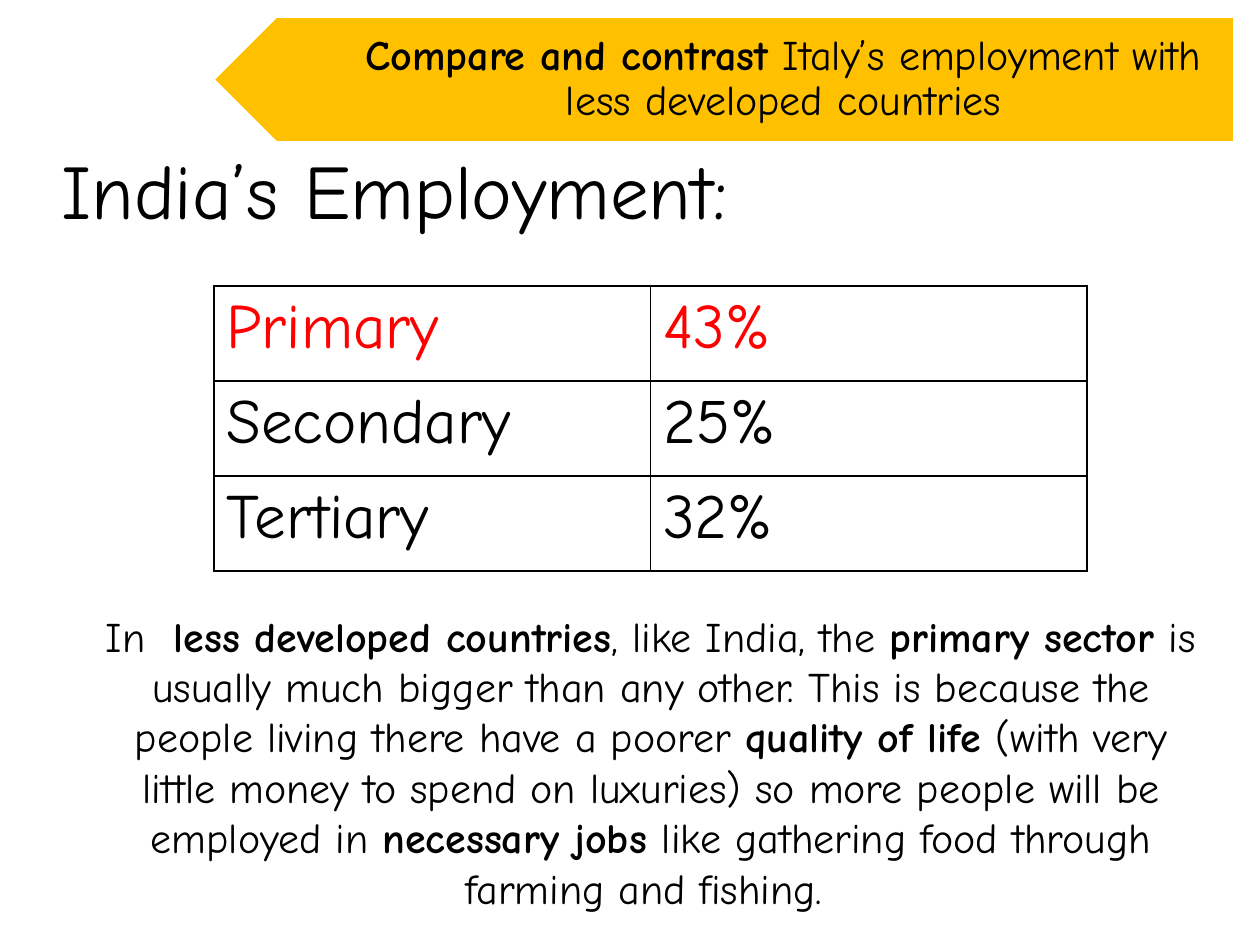
import pptx
import pptx.util
import pptx.dml.color
import pptx.enum.shapes
import pptx.enum.text
import pptx.oxml
import pptx.oxml.ns

PX = 914400 // 126  # EMU in one px
FONT = "Comic Neue"
BLACK = pptx.dml.color.RGBColor(0x00, 0x00, 0x00)
RED = pptx.dml.color.RGBColor(0xFF, 0x00, 0x00)
WHITE = pptx.dml.color.RGBColor(0xFF, 0xFF, 0xFF)
AMBER = pptx.dml.color.RGBColor(0xFF, 0xC0, 0x00)
ALIGN = pptx.enum.text.PP_ALIGN
ANCHOR = pptx.enum.text.MSO_ANCHOR


def style(run, size, color=BLACK, bold=False):
    run.font.name = FONT
    run.font.size = pptx.util.Pt(size)
    run.font.color.rgb = color
    run.font.bold = bold


def add_text(box, parts, size, align, space=1.0, anchor=ANCHOR.TOP):
    """Add a text box; parts alternate between plain and bold, plain first."""
    shape = slide.shapes.add_textbox(*[n * PX for n in box])
    frame = shape.text_frame
    frame.word_wrap = True
    frame.vertical_anchor = anchor
    para = frame.paragraphs[0]
    para.alignment = align
    para.line_spacing = space
    for i, part in enumerate(parts):
        if part:
            run = para.add_run()
            run.text = part
            style(run, size, bold=i % 2 == 1)
    return frame


prs = pptx.Presentation()
prs.slide_width = pptx.util.Inches(10)
prs.slide_height = pptx.util.Inches(7.5)
slide = prs.slides.add_slide(prs.slide_layouts[6])

# Title
add_text((49, 103, 1086, 183), ["India’s Employment:"], 44,
         ALIGN.LEFT, 0.9, ANCHOR.MIDDLE)

# Employment table
rows = [("Primary", "43%"), ("Secondary", "25%"), ("Tertiary", "32%")]
grid = slide.shapes.add_table(
    len(rows), 2, 214 * PX, 286 * PX, 873 * PX, 285 * PX).table
grid.first_row = False
grid.horz_banding = False
for r, row in enumerate(rows):
    for c, text in enumerate(row):
        cell = grid.cell(r, c)
        cell.text = text
        style(cell.text_frame.paragraphs[0].runs[0], 36,
              RED if r == 0 else BLACK)
        props = cell._tc.get_or_add_tcPr()
        for side in ("lnL", "lnR", "lnT", "lnB"):
            props.append(pptx.oxml.parse_xml(
                f'<a:{side} {pptx.oxml.ns.nsdecls("a")} w="12700">'
                f'<a:solidFill><a:srgbClr val="{BLACK}"/></a:solidFill>'
                f'</a:{side}>'))
        cell.fill.background()

# Explanation
add_text((82, 604, 1138, 318), [
    "In  ", "less developed countries", ", like India, the ",
    "primary sector ",
    "is usually much bigger than any other. This is because the people "
    "living there have a poorer ",
    "quality of life ",
    "(with very little money to spend on luxuries) so more people will be "
    "employed in ",
    "necessary jobs ",
    "like gathering food through farming and fishing. ",
], 24, ALIGN.CENTER)

# Task banner
flag = slide.shapes.add_shape(
    pptx.enum.shapes.MSO_SHAPE.PENTAGON,
    214 * PX, 17 * PX, 1020 * PX, 125 * PX)
flag.rotation = 180
flag.shadow.inherit = False
flag.fill.solid()
flag.fill.fore_color.rgb = AMBER
flag.line.color.rgb = WHITE
flag.line.width = pptx.util.Pt(1)
task = add_text((275, 17, 959, 125), [
    "", "Compare and contrast ",
    "Italy’s employment with less developed countries",
], 24, ALIGN.CENTER, 0.9, ANCHOR.MIDDLE)
task.margin_left = 82 * PX
task.margin_right = 24 * PX
task.margin_top = task.margin_bottom = 12 * PX

prs.save("out.pptx")
